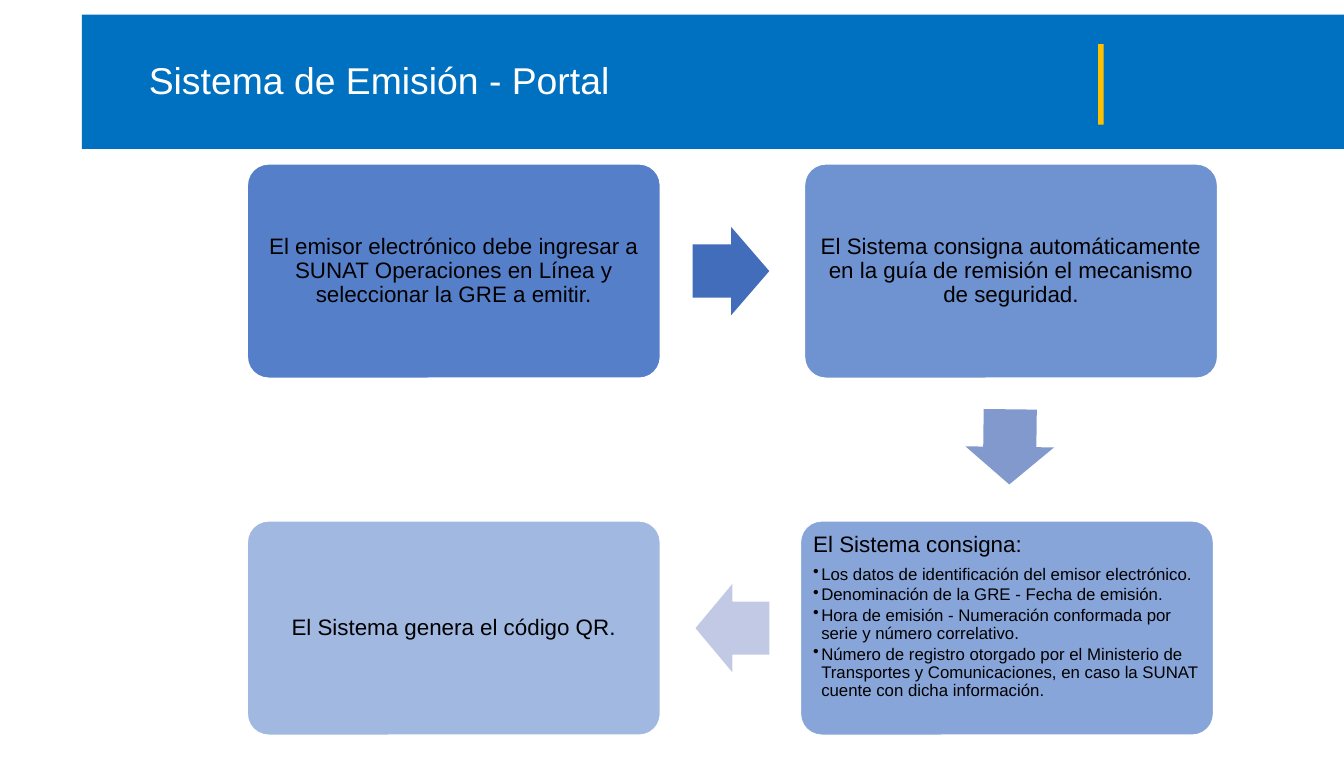
import pptx
import pptx.util
import pptx.dml.color
import pptx.enum.shapes
import pptx.enum.text
import pptx.oxml
import pptx.oxml.ns

Inches = pptx.util.Inches
Pt = pptx.util.Pt
SHAPES = pptx.enum.shapes.MSO_SHAPE
ALIGN = pptx.enum.text.PP_ALIGN
ANCHOR = pptx.enum.text.MSO_ANCHOR

FONT = "Arial"
CARD_BLUE = "4472C4"
CARD_WIDTH, CARD_HEIGHT = 3.08, 1.6
LEFT, RIGHT = 1.84, 5.99
TOP, BOTTOM = 1.22, 3.88

# Left, top, opacity in percent, heading, bullets
CARDS = [
    (LEFT, TOP, 90, "El emisor electrónico debe ingresar a SUNAT Operaciones en Línea "
     "y seleccionar la GRE a emitir.", []),
    (RIGHT, TOP, 77, "El Sistema consigna automáticamente en la guía de remisión "
     "el mecanismo de seguridad.", []),
    (RIGHT - 0.03, BOTTOM, 63, "El Sistema consigna:", [
        "Los datos de identificación del emisor electrónico.",
        "Denominación de la GRE - Fecha de emisión.",
        "Hora de emisión - Numeración conformada por serie y número correlativo.",
        "Número de registro otorgado por el Ministerio de Transportes y Comunicaciones, "
        "en caso la SUNAT cuente con dicha información.",
    ]),
    (LEFT, BOTTOM, 50, "El Sistema genera el código QR.", []),
]

# Left, top, width, rotation, colour
ARROWS = [
    (5.16, 1.69, 0.57, 0, "416DBB"),
    (7.24, 3.0, 0.56, 90.7, "8299CE"),
    (5.18, 4.35, 0.55, 180, "C1C9E4"),
]


def color(hex_text):
    return pptx.dml.color.RGBColor.from_string(hex_text)


def add_block(page, kind, left, top, width, height, fill):
    block = page.shapes.add_shape(
        kind, Inches(left), Inches(top), Inches(width), Inches(height))
    block.shadow.inherit = False
    block.fill.solid()
    block.fill.fore_color.rgb = color(fill)
    block.line.fill.background()
    return block


def style_para(para, size, hex_text, align=ALIGN.LEFT):
    para.alignment = align
    para.line_spacing = 0.9
    for span in para.runs:
        span.font.name = FONT
        span.font.size = Pt(size)
        span.font.color.rgb = color(hex_text)


def add_bullet(para):
    properties = para._p.get_or_add_pPr()
    properties.set("marL", str(Inches(0.06)))
    properties.set("indent", str(-Inches(0.06)))
    bullet = pptx.oxml.parse_xml(
        f'<a:buChar {pptx.oxml.ns.nsdecls("a")} char="•"/>')
    properties.append(bullet)


def set_opacity(block, percent):
    fill_color = block.fill._xPr.find(".//" + pptx.oxml.ns.qn("a:srgbClr"))
    fill_color.append(pptx.oxml.parse_xml(
        f'<a:alpha {pptx.oxml.ns.nsdecls("a")} val="{percent * 1000}"/>'))


def add_header(page, left, top, width, height):
    add_block(page, SHAPES.RECTANGLE, left, top, width, height, "0070C0")
    # Yellow accent bar
    add_block(page, SHAPES.RECTANGLE, left + 7.57, top + 0.22, 0.04, 0.6, "FFC000")
    # Title
    box = page.shapes.add_textbox(
        Inches(left + 0.4), Inches(top + 0.04), Inches(6.08), Inches(0.93))
    frame = box.text_frame
    frame.word_wrap = True
    frame.vertical_anchor = ANCHOR.MIDDLE
    frame.text = "Sistema de Emisión - Portal"
    style_para(frame.paragraphs[0], 20, "FFFFFF")


def add_card(page, left, top, opacity, heading, bullets):
    card = add_block(page, SHAPES.ROUNDED_RECTANGLE, left, top,
                     CARD_WIDTH, CARD_HEIGHT, CARD_BLUE)
    card.adjustments[0] = 0.1
    set_opacity(card, opacity)
    card.line.color.rgb = color("FFFFFF")
    card.line.width = Pt(1)

    frame = card.text_frame
    frame.word_wrap = True
    frame.margin_left = frame.margin_right = Inches(0.05)
    frame.margin_top = frame.margin_bottom = Inches(0.05)
    frame.vertical_anchor = ANCHOR.TOP if bullets else ANCHOR.MIDDLE
    frame.text = heading
    style_para(frame.paragraphs[0], 12, "000000",
               ALIGN.LEFT if bullets else ALIGN.CENTER)
    if bullets:
        frame.paragraphs[0].space_after = Pt(4.2)
    for bullet in bullets:
        para = frame.add_paragraph()
        para.text = bullet
        para.level = 1
        add_bullet(para)
        style_para(para, 9, "000000")
        para.space_after = Pt(1.35)


def add_arrow(page, left, top, width, rotation, fill):
    arrow = add_block(page, SHAPES.RIGHT_ARROW, left, top, width, 0.66, fill)
    arrow.adjustments[0] = 0.6
    arrow.adjustments[1] = 0.5
    arrow.rotation = rotation


def main():
    deck = pptx.Presentation()
    deck.slide_width = Inches(10.01)
    deck.slide_height = Inches(5.64)
    page = deck.slides.add_slide(deck.slide_layouts[6])

    add_header(page, 0.61, 0.11, 9.4, 1)
    for card in CARDS:
        add_card(page, *card)
    for arrow in ARROWS:
        add_arrow(page, *arrow)

    deck.save("out.pptx")


if __name__ == "__main__":
    main()
